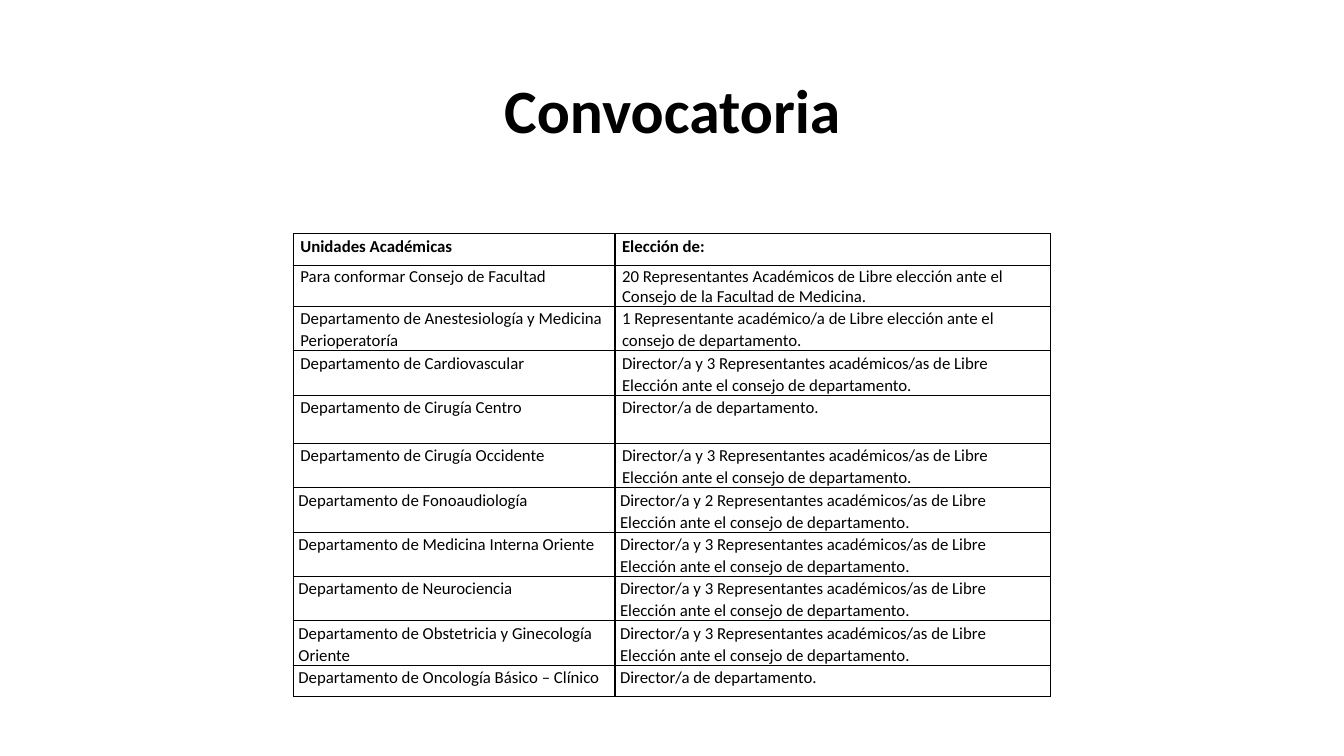
import pptx
import pptx.dml.color
import pptx.enum.text
import pptx.oxml.ns
import pptx.util
from lxml import etree
from pptx.util import Inches

COLORS = {"ink": "000000"}
FONT = "Calibri"

UNIT = "Departamento de "
COUNCIL = "onsejo de departamento."
SOLE_DIRECTOR = "Director/a de departamento."
DIRECTOR_AND_REPS = (
    "Director/a y {} Representantes académicos/as de Libre Elección ante el c" + COUNCIL
)
ROWS = [
    ("Unidades Académicas", "Elección de:", 0.31),
    ("Para conformar Consejo de Facultad",
     "20 Representantes Académicos de Libre elección ante el Consejo de la Facultad de Medicina.",
     0.41),
    (UNIT + "Anestesiología y Medicina Perioperatoría",
     "1 Representante académico/a de Libre elección ante el c" + COUNCIL, 0.44),
    (UNIT + "Cardiovascular", DIRECTOR_AND_REPS.format(3), 0.44),
    (UNIT + "Cirugía Centro", SOLE_DIRECTOR, 0.48),
    (UNIT + "Cirugía Occidente", DIRECTOR_AND_REPS.format(3), 0.44),
    (UNIT + "Fonoaudiología", DIRECTOR_AND_REPS.format(2), 0.44),
    (UNIT + "Medicina Interna Oriente", DIRECTOR_AND_REPS.format(3), 0.44),
    (UNIT + "Neurociencia", DIRECTOR_AND_REPS.format(3), 0.44),
    (UNIT + "Obstetricia y Ginecología Oriente", DIRECTOR_AND_REPS.format(3), 0.44),
    (UNIT + "Oncología Básico – Clínico", SOLE_DIRECTOR, 0.31),
]
COLUMN_WIDTHS = [3.19, 4.32]
FACULTY_ROW = 1
FIRST_NARROW_MARGIN_ROW = 6


def style_text(paragraph, size, bold):
    font = paragraph.runs[0].font
    font.name = FONT
    font.size = pptx.util.Pt(size)
    font.bold = bold
    font.color.rgb = pptx.dml.color.RGBColor.from_string(COLORS["ink"])


def add_borders(cell):
    """Draw a 1 pt line on all four sides; call before setting the fill."""
    qn = pptx.oxml.ns.qn
    properties = cell._tc.get_or_add_tcPr()
    for side in ("lnL", "lnR", "lnT", "lnB"):
        line = etree.SubElement(properties, qn("a:" + side), w=str(pptx.util.Pt(1)))
        fill = etree.SubElement(line, qn("a:solidFill"))
        etree.SubElement(fill, qn("a:srgbClr"), val=COLORS["ink"])


presentation = pptx.Presentation()
presentation.slide_width = Inches(13.33)
presentation.slide_height = Inches(7.5)
slide = presentation.slides.add_slide(presentation.slide_layouts[6])

title = slide.shapes.add_textbox(
    Inches(0.92), Inches(0.4), Inches(11.5), Inches(1.45)
).text_frame
title.word_wrap = True
title.vertical_anchor = pptx.enum.text.MSO_ANCHOR.MIDDLE
title.text = "Convocatoria"
title.paragraphs[0].alignment = pptx.enum.text.PP_ALIGN.CENTER
title.paragraphs[0].line_spacing = 0.9
style_text(title.paragraphs[0], 44, True)

elections = slide.shapes.add_table(
    len(ROWS), len(COLUMN_WIDTHS), Inches(2.91), Inches(2.32),
    Inches(sum(COLUMN_WIDTHS)), Inches(sum(height for *_, height in ROWS)),
).table
elections.first_row = False
elections.horz_banding = False
for column, width in zip(elections.columns, COLUMN_WIDTHS):
    column.width = Inches(width)

for row_index, (unit, election, height) in enumerate(ROWS):
    elections.rows[row_index].height = Inches(height)
    side_margin = Inches(0.07 if row_index < FIRST_NARROW_MARGIN_ROW else 0.05)
    for column_index, text in enumerate((unit, election)):
        cell = elections.cell(row_index, column_index)
        add_borders(cell)
        cell.fill.background()
        cell.margin_left = cell.margin_right = side_margin
        cell.margin_top = Inches(0.01)
        cell.margin_bottom = 0
        cell.text_frame.text = text
        paragraph = cell.text_frame.paragraphs[0]
        if row_index != FACULTY_ROW:
            paragraph.line_spacing = 1.07
            paragraph.space_after = pptx.util.Pt(8)
        style_text(paragraph, 12, row_index == 0)

presentation.save("out.pptx")
